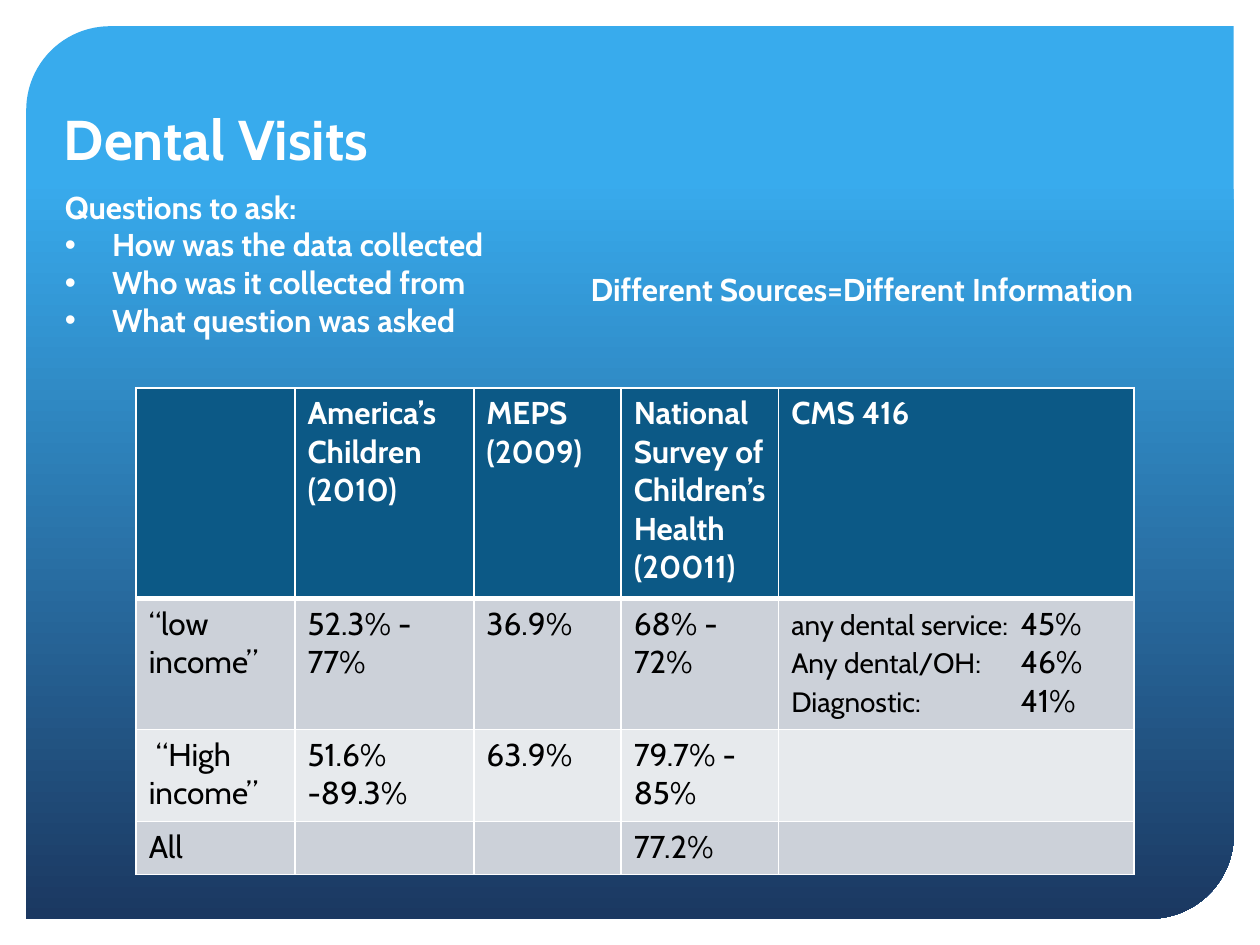
from lxml import etree
from pptx import Presentation
from pptx.dml.color import RGBColor
from pptx.enum import shapes, text
from pptx.oxml.ns import qn
from pptx.util import Pt

FONT = "Cabin"
WHITE, BLACK = "FFFFFF", "000000"
HEADER_FILL = "0C5986"
BAND_FILLS = ["CCD1D9", "E7EAED"]

QUESTIONS = [
    "How was the data collected",
    "Who was it collected from",
    "What question was asked",
]
CMS_RATES = [
    ("any dental service:", "45%"),
    ("Any dental/OH:", "46%"),
    ("Diagnostic:", "41%"),
]
COLUMN_WIDTHS = [90.72, 102.24, 84.24, 90, 203.04]
ROW_HEIGHTS = [120.24, 74.88, 52.56, 30.24]
VISITS = [
    ["", "America’s Children (2010)", "MEPS (2009)",
     "National Survey of Children’s Health (20011)", "CMS 416"],
    ["“low income”", "52.3% - 77%", "36.9%", "68% - 72%", CMS_RATES],
    [" “High income”", "51.6% -89.3%", "63.9%", "79.7% - 85%", ""],
    ["All", "", "", "77.2%", ""],
]


def color(hex_string):
    return RGBColor.from_string(hex_string)


def style(part, size, hex_string, bold):
    part.font.name = FONT
    part.font.size = Pt(size)
    part.font.bold = bold
    part.font.color.rgb = color(hex_string)


def add_background(slide, left, top, width, height):
    panel = slide.shapes.add_shape(
        shapes.MSO_SHAPE.ROUND_2_DIAG_RECTANGLE,
        Pt(left), Pt(top), Pt(width), Pt(height))
    panel.adjustments[0] = 0.094
    panel.adjustments[1] = 0
    panel.shadow.inherit = False
    panel.line.fill.background()
    panel.fill.gradient()
    panel.fill.gradient_angle = 270
    stops = [(0.17, "38ABED"), (1, "1B3861")]
    for stop, (position, hex_string) in zip(panel.fill.gradient_stops, stops):
        stop.position = position
        stop.color.rgb = color(hex_string)


def add_text(slide, left, top, width, height, lines, size):
    box = slide.shapes.add_textbox(Pt(left), Pt(top), Pt(width), Pt(height))
    frame = box.text_frame
    frame.word_wrap = True
    frame.auto_size = text.MSO_AUTO_SIZE.NONE
    frame.text = "\n".join(lines)
    for paragraph in frame.paragraphs:
        for run in paragraph.runs:
            style(run, size, WHITE, True)
    return frame


def add_bullet(paragraph, indent):
    properties = paragraph._p.get_or_add_pPr()
    properties.set("marL", str(Pt(indent)))
    properties.set("indent", str(-Pt(indent)))
    font = etree.SubElement(properties, qn("a:buFont"))
    font.set("typeface", "Arial")
    etree.SubElement(properties, qn("a:buChar")).set("char", "•")


def add_questions(slide, left, top, width, height):
    frame = add_text(slide, left, top, width, height,
                     ["Questions to ask:"] + QUESTIONS, 18)
    for question in frame.paragraphs[1:]:
        add_bullet(question, 27)


def add_border(cell, side, width):
    line = etree.SubElement(cell._tc.get_or_add_tcPr(), qn(f"a:ln{side}"))
    line.set("w", str(Pt(width)))
    fill = etree.SubElement(line, qn("a:solidFill"))
    etree.SubElement(fill, qn("a:srgbClr")).set("val", WHITE)


def add_tab_stop(paragraph, position):
    tabs = etree.SubElement(paragraph._p.get_or_add_pPr(), qn("a:tabLst"))
    tab = etree.SubElement(tabs, qn("a:tab"))
    tab.set("pos", str(Pt(position)))
    tab.set("algn", "l")


def fill_rates(frame, rates):
    """Write one line per rate, with the values lined up at a tab stop."""
    for index, (service, rate) in enumerate(rates):
        paragraph = frame.paragraphs[0] if index == 0 else frame.add_paragraph()
        add_tab_stop(paragraph, 131)
        for words, size in [(service + "\t", 16), (rate, 18)]:
            run = paragraph.add_run()
            run.text = words
            style(run, size, BLACK, False)


def fill_cell(cell, content, row):
    is_header = row == 0
    for side in "LRTB":
        thick = (is_header and side == "B") or (row == 1 and side == "T")
        add_border(cell, side, 3 if thick else 1)
    cell.fill.solid()
    cell.fill.fore_color.rgb = color(
        HEADER_FILL if is_header else BAND_FILLS[(row - 1) % 2])
    if isinstance(content, list):
        fill_rates(cell.text_frame, content)
    else:
        cell.text_frame.text = content
        style(cell.text_frame.paragraphs[0], 18,
              WHITE if is_header else BLACK, is_header)


def add_visits_table(slide, left, top):
    table = slide.shapes.add_table(
        len(ROW_HEIGHTS), len(COLUMN_WIDTHS), Pt(left), Pt(top),
        Pt(sum(COLUMN_WIDTHS)), Pt(sum(ROW_HEIGHTS))).table
    table.horz_banding = False
    for column, width in zip(table.columns, COLUMN_WIDTHS):
        column.width = Pt(width)
    for row, height in enumerate(ROW_HEIGHTS):
        table.rows[row].height = Pt(height)
        for column, content in enumerate(VISITS[row]):
            fill_cell(table.cell(row, column), content, row)


def main():
    deck = Presentation()
    deck.slide_width, deck.slide_height = Pt(720), Pt(540)
    slide = deck.slides.add_slide(deck.slide_layouts[6])
    add_background(slide, 15, 15, 690, 510)
    add_text(slide, 29.5, 56.2, 201.6, 46, ["Dental Visits"], 32)
    add_questions(slide, 30, 103.7, 275.8, 94.5)
    add_visits_table(slide, 77.8, 221.8)
    add_text(slide, 330.5, 150.5, 355.7, 29,
             ["Different Sources=Different Information"], 18)
    deck.save("out.pptx")


if __name__ == "__main__":
    main()
